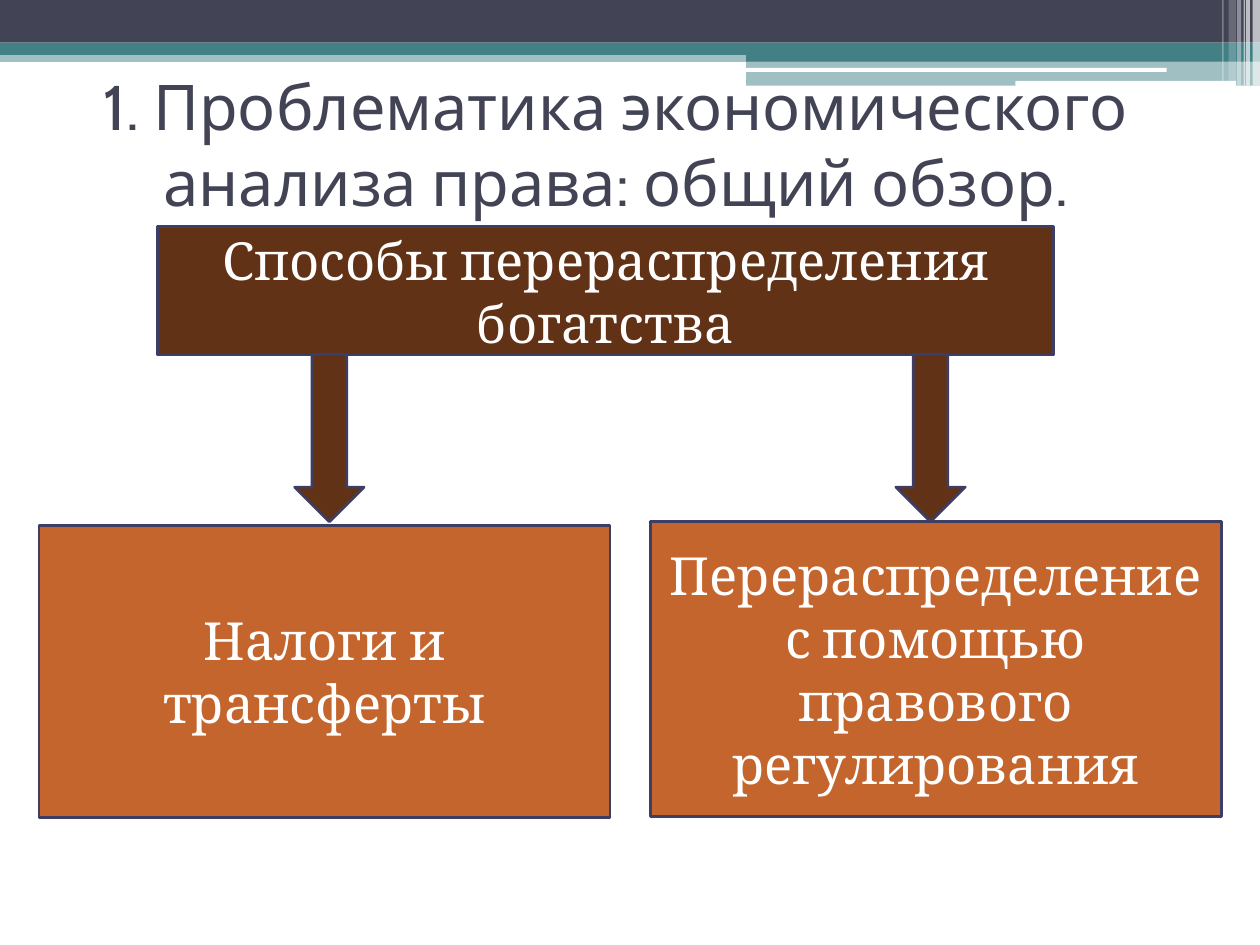
from dataclasses import dataclass

from lxml import etree
from pptx import Presentation
from pptx.dml.color import RGBColor
from pptx.enum.shapes import MSO_SHAPE
from pptx.enum.text import MSO_ANCHOR, PP_ALIGN
from pptx.oxml.ns import qn
from pptx.shapes.autoshape import Shape
from pptx.slide import Slide
from pptx.util import Cm, Pt

RECTANGLE = MSO_SHAPE.RECTANGLE
ROUNDED = MSO_SHAPE.ROUNDED_RECTANGLE
DOWN_ARROW = MSO_SHAPE.DOWN_ARROW
MIDDLE = MSO_ANCHOR.MIDDLE
CENTER = PP_ALIGN.CENTER

COLORS = {
    "slate": "424456",
    "teal": "438086",
    "white": "FFFFFF",
    "brown": "623217",
    "orange": "C4652D",
    "outline": "3D3E66",
}
SLIDE_WIDTH, SLIDE_HEIGHT = 25.4, 19.05
OUTLINE_WIDTH = 1.5


@dataclass(frozen=True)
class Block:
    """A filled shape; lengths are in centimetres, opacity in percent."""
    left: float
    top: float
    width: float
    height: float
    fill: str
    opacity: int = 100
    geometry: MSO_SHAPE = RECTANGLE
    outlined: bool = False
    text: str = ""


@dataclass(frozen=True)
class TextFormat:
    font: str
    size: int
    color: str


TITLE_FORMAT = TextFormat("Cabin", 36, "slate")
BOX_FORMAT = TextFormat("Cambria", 30, "white")

HEADER = [
    Block(0, 1.02, SLIDE_WIDTH, 0.23, "teal", 50),
    Block(0, 0, SLIDE_WIDTH, 0.86, "slate"),
    Block(0, 0.86, SLIDE_WIDTH, 0.25, "teal"),
    Block(15.04, 0.99, 10.36, 0.25, "teal"),
    Block(15.04, 1.22, 10.36, 0.51, "teal", 50),
    Block(15.01, 1.37, 8.51, 0.08, "white", geometry=ROUNDED),
    Block(20.47, 1.63, 4.45, 0.1, "white", geometry=ROUNDED),
]
# Left, width, height and opacity of the vertical stripes in the corner
STRIPES = [
    (25.25, 0.15, 1.73, 65),
    (25.12, 0.08, 1.73, 65),
    (25.07, 0.03, 1.73, 60),
    (24.94, 0.08, 1.73, 40),
    (24.77, 0.15, 1.63, 20),
    (24.64, 0.03, 1.63, 30),
]
BOXES = [
    Block(3.18, 4.57, 18.06, 2.59, "brown", outlined=True,
          text="Способы перераспределения богатства"),
    Block(0.79, 10.59, 11.51, 5.89, "orange", outlined=True,
          text="Налоги и трансферты"),
    Block(13.11, 10.52, 11.51, 5.94, "orange", outlined=True,
          text="Перераспределение с помощью правового регулирования"),
]
ARROW_LEFTS = (5.94, 18.06)


def rgb(name: str) -> RGBColor:
    return RGBColor.from_string(COLORS[name])


def write_text(shape: Shape, text: str, text_format: TextFormat) -> None:
    frame = shape.text_frame
    frame.word_wrap = True
    frame.vertical_anchor = MIDDLE
    paragraph = frame.paragraphs[0]
    paragraph.alignment = CENTER
    run = paragraph.add_run()
    run.text = text
    values = {"name": text_format.font, "size": Pt(text_format.size)}
    for attribute, value in values.items():
        setattr(run.font, attribute, value)
    run.font.color.rgb = rgb(text_format.color)


def draw_block(slide: Slide, block: Block) -> None:
    shape = slide.shapes.add_shape(
        block.geometry, Cm(block.left), Cm(block.top), Cm(block.width), Cm(block.height))
    shape.shadow.inherit = False
    shape.fill.solid()
    shape.fill.fore_color.rgb = rgb(block.fill)
    if block.opacity < 100:
        color = shape.fill._xPr.find(qn("a:solidFill"))[0]
        etree.SubElement(color, qn("a:alpha"), val=str(block.opacity * 1000))
    if block.outlined:
        shape.line.color.rgb = rgb("outline")
        shape.line.width = Pt(OUTLINE_WIDTH)
    else:
        shape.line.fill.background()
    if block.text:
        write_text(shape, block.text, BOX_FORMAT)


def main() -> None:
    presentation = Presentation()
    presentation.slide_width = Cm(SLIDE_WIDTH)
    presentation.slide_height = Cm(SLIDE_HEIGHT)
    slide = presentation.slides.add_slide(presentation.slide_layouts[6])

    stripes = [Block(left, 0, width, height, "white", opacity)
               for left, width, height, opacity in STRIPES]
    arrows = [Block(left, 7.14, 1.4, 3.38, "brown", geometry=DOWN_ARROW, outlined=True)
              for left in ARROW_LEFTS]
    for block in HEADER + stripes + BOXES + arrows:
        draw_block(slide, block)

    title = slide.shapes.add_textbox(Cm(0.99), Cm(1.4), Cm(22.86), Cm(2.97))
    write_text(title, "1. Проблематика экономического анализа права: общий обзор.",
               TITLE_FORMAT)
    presentation.save("out.pptx")


if __name__ == "__main__":
    main()
